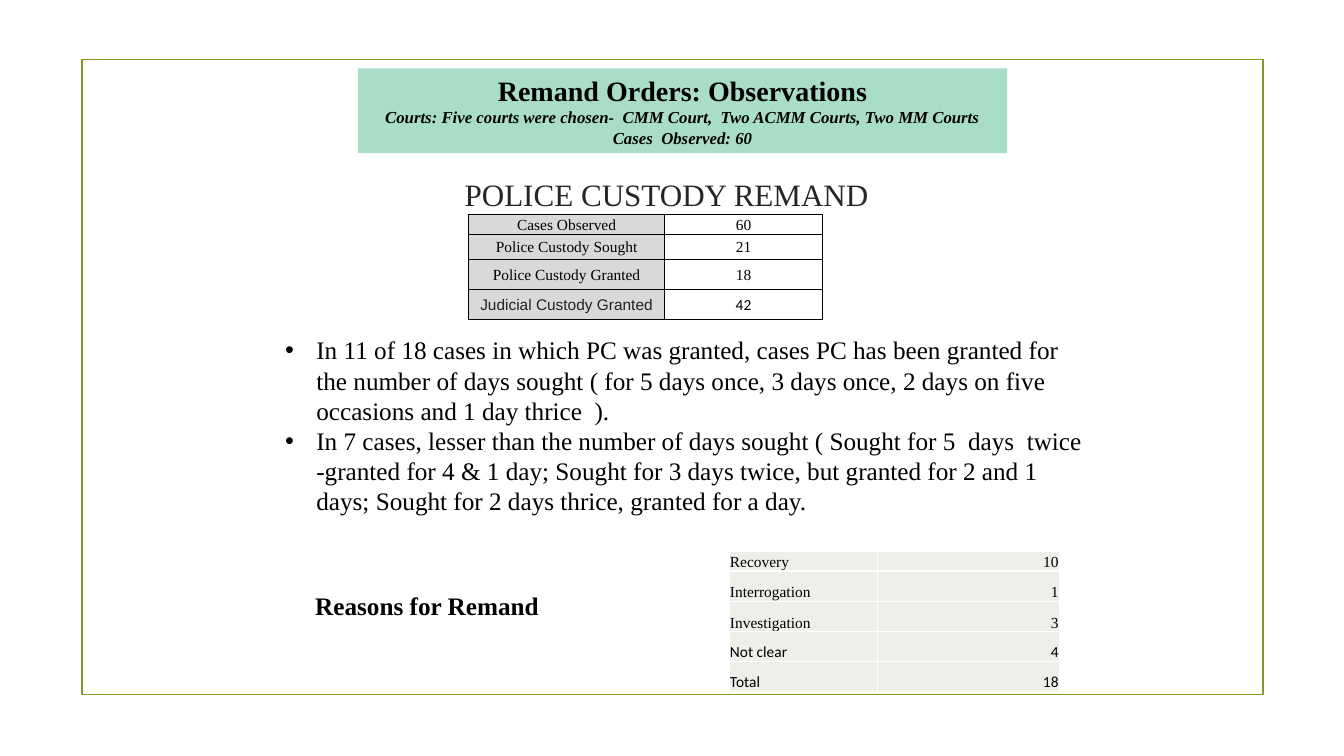
import pptx
import pptx.chart.data
import pptx.dml.color
import pptx.enum.shapes
import pptx.enum.text
import pptx.oxml
import pptx.oxml.ns
import pptx.util

Inches = pptx.util.Inches
Pt = pptx.util.Pt
RGBColor = pptx.dml.color.RGBColor
ALIGN = pptx.enum.text.PP_ALIGN
ANCHOR = pptx.enum.text.MSO_ANCHOR
RECTANGLE = pptx.enum.shapes.MSO_SHAPE.RECTANGLE

BLACK = RGBColor(0x00, 0x00, 0x00)
WHITE = RGBColor(0xFF, 0xFF, 0xFF)
CHARCOAL = RGBColor(0x26, 0x26, 0x26)
DARK_GREY = RGBColor(0x22, 0x22, 0x22)
LABEL_GREY = RGBColor(0xD9, 0xD9, 0xD9)
PALE_GREEN = RGBColor(0xED, 0xEF, 0xE8)
MINT = RGBColor(0xA9, 0xDD, 0xC7)
OLIVE = RGBColor(0x83, 0x99, 0x2A)

SERIF = "Times New Roman"
CUSTODY_ROWS = [("Cases Observed", "60"), ("Police Custody Sought", "21"),
                ("Police Custody Granted", "18"), ("Judicial Custody Granted", "42")]
REASON_ROWS = [("Recovery", "10"), ("Interrogation", "1"), ("Investigation", "3"),
               ("Not clear", "4"), ("Total", "18")]
FINDINGS = [
    "In 11 of 18 cases in which PC was granted, cases PC has been granted for the number of "
    "days sought ( for 5 days once, 3 days once, 2 days on five occasions and 1 day thrice  ).",
    "In 7 cases, lesser than the number of days sought ( Sought for 5  days  twice -granted "
    "for 4 & 1 day; Sought for 3 days twice, but granted for 2 and 1 days; Sought for 2 days "
    "thrice, granted for a day.",
]


def write(para, text, size=11, font=SERIF, color=BLACK, bold=False, italic=False,
          align=ALIGN.LEFT):
    """Add one formatted span to a paragraph."""
    para.alignment = align
    span = para.add_run()
    span.text = text
    span.font.size = Pt(size)
    span.font.name = font
    span.font.color.rgb = color
    span.font.bold = bold
    span.font.italic = italic


def add_bullet(para, indent):
    properties = para._p.get_or_add_pPr()
    properties.set("marL", str(indent))
    properties.set("indent", str(-indent))
    namespace = pptx.oxml.ns.nsdecls("a")
    properties.append(pptx.oxml.parse_xml(f'<a:buFont {namespace} typeface="Arial"/>'))
    properties.append(pptx.oxml.parse_xml(f'<a:buChar {namespace} char="•"/>'))


def add_borders(cell, color):
    properties = cell._tc.get_or_add_tcPr()
    for side in ("lnL", "lnR", "lnT", "lnB"):
        properties.append(pptx.oxml.parse_xml(
            f'<a:{side} {pptx.oxml.ns.nsdecls("a")} w="{Pt(1)}"><a:solidFill>'
            f'<a:srgbClr val="{color}"/></a:solidFill></a:{side}>'))


def add_text_box(page, left, top, width, height):
    frame = page.shapes.add_textbox(Inches(left), Inches(top), Inches(width),
                                    Inches(height)).text_frame
    frame.word_wrap = True
    return frame


def add_rectangle(page, left, top, width, height):
    box = page.shapes.add_shape(RECTANGLE, Inches(left), Inches(top), Inches(width),
                                Inches(height))
    box.shadow.inherit = False
    return box


def add_frame(page, left, top, width, height):
    box = add_rectangle(page, left, top, width, height)
    box.fill.background()
    box.line.color.rgb = OLIVE
    box.line.width = Pt(1.25)


def add_banner(page, left, top, width, height):
    box = add_rectangle(page, left, top, width, height)
    box.fill.solid()
    box.fill.fore_color.rgb = MINT
    box.line.fill.background()
    frame = box.text_frame
    frame.word_wrap = True
    frame.vertical_anchor = ANCHOR.TOP
    para = frame.paragraphs[0]
    write(para, "Remand Orders: Observations", size=20, bold=True, align=ALIGN.CENTER)
    for line in ("Courts: Five courts were chosen-  CMM Court,  Two ACMM Courts, Two MM Courts",
                 "Cases  Observed: 60"):
        para.add_line_break()
        write(para, line, size=12, bold=True, italic=True, align=ALIGN.CENTER)


def add_heading(page, left, top, width, height, text, **style):
    write(add_text_box(page, left, top, width, height).paragraphs[0], text, **style)


def add_findings(page, left, top, width, height):
    frame = add_text_box(page, left, top, width, height)
    for index, finding in enumerate(FINDINGS):
        para = frame.add_paragraph() if index else frame.paragraphs[0]
        add_bullet(para, Inches(0.31))
        write(para, finding, size=18)


def add_grid(page, left, top, rows, widths, heights, border, fills, aligns, anchor, styles):
    """Place a table; fills and aligns go by column, styles by (row, column)."""
    table = page.shapes.add_table(len(rows), len(widths), Inches(left), Inches(top),
                                  Inches(sum(widths)), Inches(sum(heights))).table
    table.first_row = False
    table.horz_banding = False
    for column, width in zip(table.columns, widths):
        column.width = Inches(width)
    for row, height in zip(table.rows, heights):
        row.height = Inches(height)
    for row_index, values in enumerate(rows):
        for column_index, value in enumerate(values):
            cell = table.cell(row_index, column_index)
            cell.margin_left = cell.margin_right = cell.margin_top = Inches(0.01)
            cell.margin_bottom = 0
            cell.vertical_anchor = anchor
            add_borders(cell, border)
            fill = fills[column_index]
            if fill is None:
                cell.fill.background()
            else:
                cell.fill.solid()
                cell.fill.fore_color.rgb = fill
            write(cell.text_frame.paragraphs[0], value, align=aligns[column_index],
                  **styles.get((row_index, column_index), {}))


def build_slide(page):
    add_frame(page, 0.81, 0.59, 11.72, 6.3)
    add_banner(page, 3.55, 0.68, 6.44, 0.84)

    # Police custody figures
    add_heading(page, 4.51, 1.69, 4.4, 0.53, "POLICE CUSTODY REMAND", size=22.2,
                color=CHARCOAL)
    add_grid(page, 4.65, 2.13, CUSTODY_ROWS, [1.94, 1.57], [0.19, 0.25, 0.3, 0.3], BLACK,
             [LABEL_GREY, None], [ALIGN.CENTER, ALIGN.CENTER], ANCHOR.MIDDLE,
             {(3, 0): {"font": "Arial", "color": DARK_GREY}, (3, 1): {"font": "Calibri"}})

    add_findings(page, 2.73, 3.27, 8.14, 1.92)

    # Reasons for remand
    add_heading(page, 2.19, 5.81, 4.09, 0.4, "Reasons for Remand", size=18, bold=True,
                align=ALIGN.CENTER)
    calibri_cells = {(row, column): {"font": "Calibri"} for row in (3, 4) for column in (0, 1)}
    add_grid(page, 7.23, 5.47, REASON_ROWS, [1.47, 1.81], [0.19] + [0.3] * 4, WHITE,
             [PALE_GREEN, PALE_GREEN], [ALIGN.LEFT, ALIGN.RIGHT], ANCHOR.BOTTOM, calibri_cells)


def main():
    deck = pptx.Presentation()
    deck.slide_width = Inches(13.33)
    deck.slide_height = Inches(7.5)
    build_slide(deck.slides.add_slide(deck.slide_layouts[6]))
    deck.save("out.pptx")


if __name__ == "__main__":
    main()
